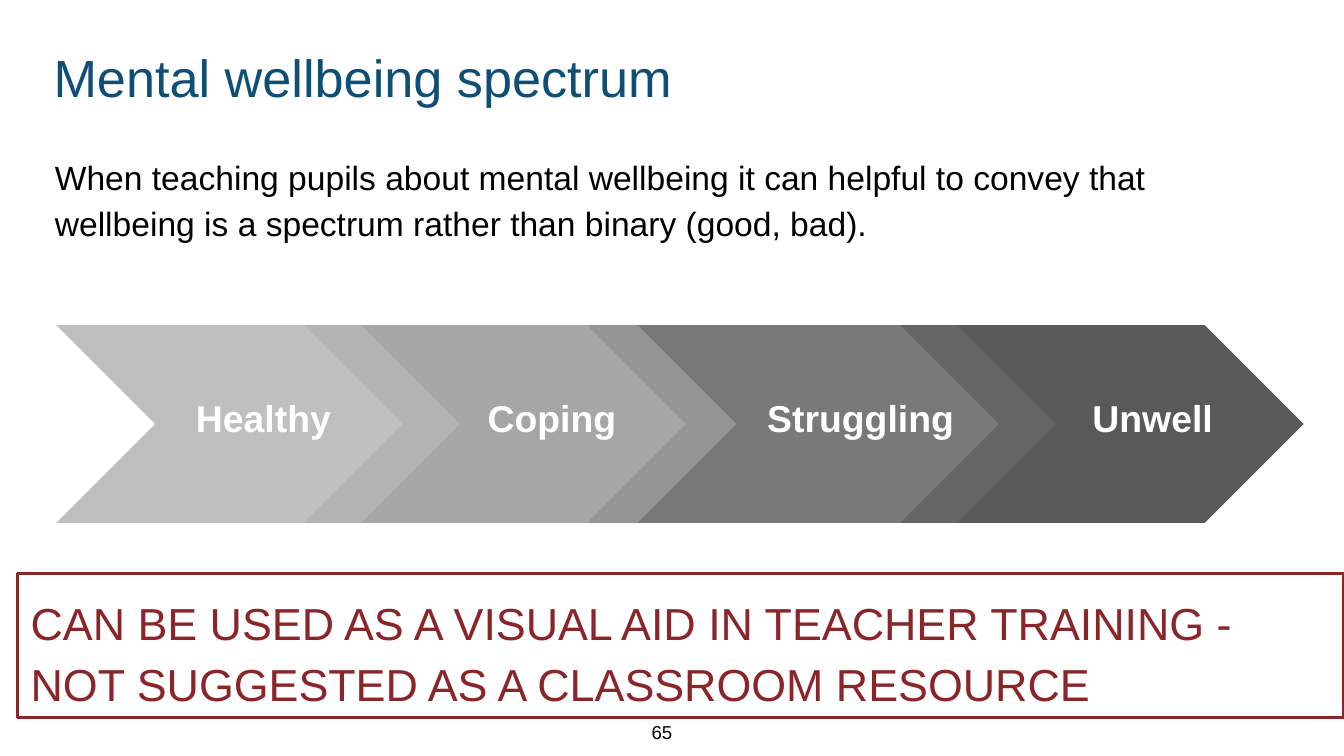
import pptx
import pptx.util
import pptx.dml.color
import pptx.enum.shapes
import pptx.enum.text
import pptx.oxml.ns
import lxml.etree

Inches = pptx.util.Inches
Pt = pptx.util.Pt
ALIGN = pptx.enum.text.PP_ALIGN
ANCHOR = pptx.enum.text.MSO_ANCHOR

COLORS = {"title": "104F75", "warning": "8A2529", "body": "000000", "label": "FFFFFF"}
FONT = "Arial"

TITLE = "Mental wellbeing spectrum"
INTRO = ("When teaching pupils about mental wellbeing it can helpful to convey that "
         "wellbeing is a spectrum rather than binary (good, bad).")
WARNING = "CAN BE USED AS A VISUAL AID IN TEACHER TRAINING - NOT SUGGESTED AS A CLASSROOM RESOURCE"
PAGE_NUMBER = "65"

STAGES = [
    {"name": "Healthy", "left": 0.42, "width": 3, "fill": "B7B7B7", "opacity": 88,
     "label_left": 1.36, "label_width": 1.26},
    {"name": "Coping", "left": 2.26, "width": 3.22, "fill": "999999", "opacity": 87,
     "label_left": 3.53, "label_width": 1.26},
    {"name": "Struggling", "left": 4.37, "width": 3.49, "fill": "666666", "opacity": 87,
     "label_left": 5.61, "label_width": 1.82},
    {"name": "Unwell", "left": 6.7, "width": 3, "fill": "434343", "opacity": 88,
     "label_left": 8.03, "label_width": 1.26},
]
STAGE_TOP, STAGE_HEIGHT = 2.42, 1.47
LABEL_TOP, LABEL_HEIGHT = 2.84, 0.47


def rgb(value):
    return pptx.dml.color.RGBColor.from_string(value)


def add_text(slide, box, text, size, color, bold=False, align=ALIGN.LEFT,
             anchor=ANCHOR.TOP, line_spacing=None, space_after=None):
    holder = slide.shapes.add_textbox(*map(Inches, box))
    frame = holder.text_frame
    frame.word_wrap = True
    frame.vertical_anchor = anchor
    frame.margin_left = frame.margin_right = Inches(0.1)
    frame.margin_top = frame.margin_bottom = Inches(0.1)
    paragraph = frame.paragraphs[0]
    paragraph.alignment = align
    paragraph.line_spacing = line_spacing
    paragraph.space_after = space_after
    run = paragraph.add_run()
    run.text = text
    run.font.name = FONT
    run.font.size = Pt(size)
    run.font.bold = bold
    run.font.color.rgb = rgb(color)
    return holder


def add_stage(slide, stage):
    chevron = slide.shapes.add_shape(
        pptx.enum.shapes.MSO_SHAPE.CHEVRON, Inches(stage["left"]), Inches(STAGE_TOP),
        Inches(stage["width"]), Inches(STAGE_HEIGHT))
    chevron.adjustments[0] = 0.5
    chevron.shadow.inherit = False
    chevron.line.fill.background()
    chevron.fill.solid()
    chevron.fill.fore_color.rgb = rgb(stage["fill"])
    qn = pptx.oxml.ns.qn
    color = next(chevron.element.spPr.iter(qn("a:srgbClr")))
    lxml.etree.SubElement(color, qn("a:alpha"), val=str(stage["opacity"] * 1000))


def main():
    presentation = pptx.Presentation()
    presentation.slide_width = Inches(10)
    presentation.slide_height = Inches(10 * 9 / 16)
    slide = presentation.slides.add_slide(presentation.slide_layouts[6])

    add_text(slide, (0.3, 0.24, 8.48, 0.63), TITLE, 28, COLORS["title"])
    warning = add_text(slide, (0.13, 4.27, 9.87, 1.07), WARNING, 24, COLORS["warning"],
                       line_spacing=1.15, space_after=Pt(16))
    warning.line.color.rgb = rgb(COLORS["warning"])
    warning.line.width = Pt(1.5)
    add_text(slide, (0.31, 1.02, 8.98, 0.83), INTRO, 18, COLORS["body"], line_spacing=1.15)
    add_text(slide, (4.71, 5.26, 0.39, 0.37), PAGE_NUMBER, 10, COLORS["body"],
             align=ALIGN.RIGHT, anchor=ANCHOR.MIDDLE)

    for stage in reversed(STAGES):
        add_stage(slide, stage)
    for stage in STAGES:
        add_text(slide, (stage["label_left"], LABEL_TOP, stage["label_width"], LABEL_HEIGHT),
                 stage["name"], 20, COLORS["label"], bold=True)

    presentation.save("out.pptx")


if __name__ == "__main__":
    main()
